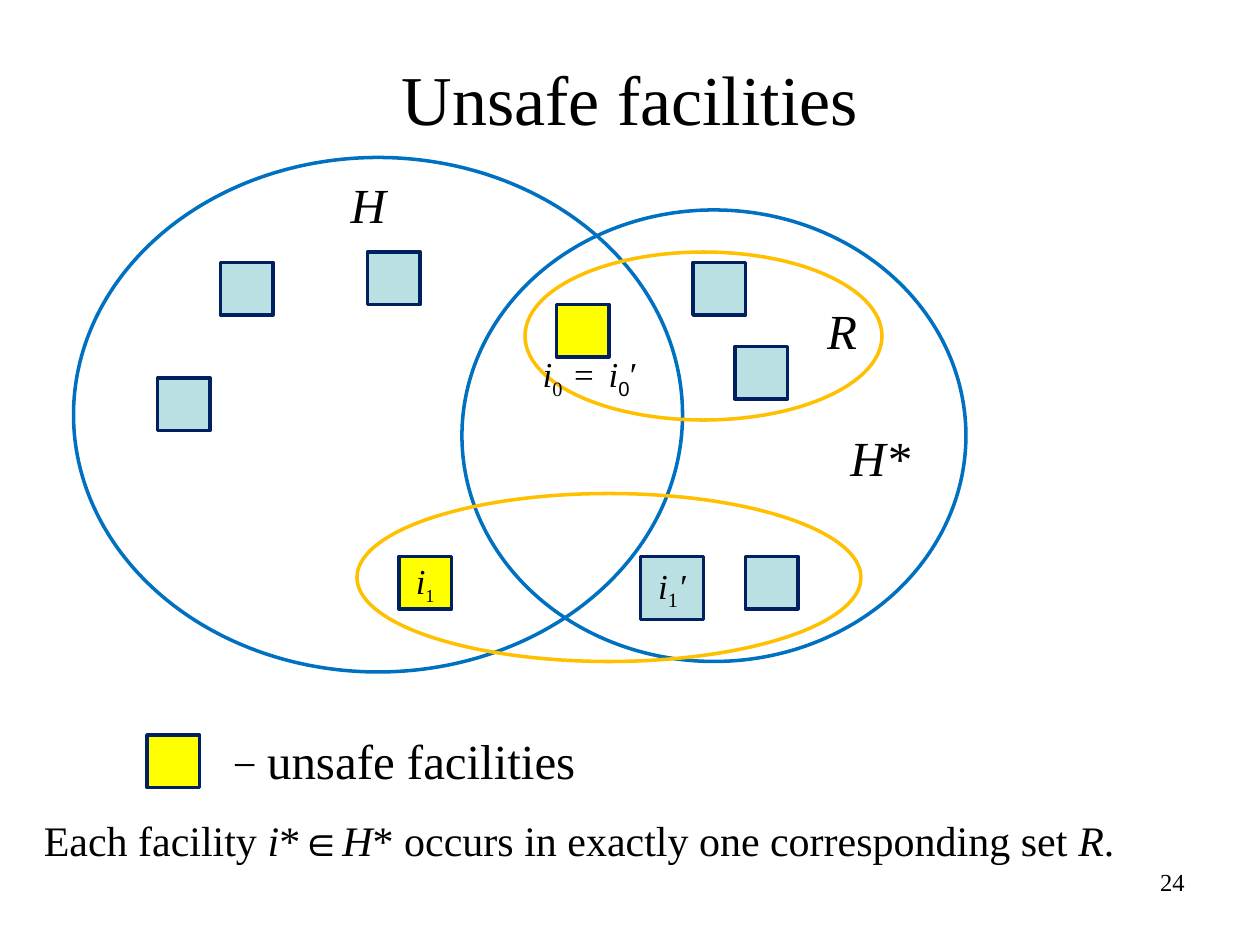
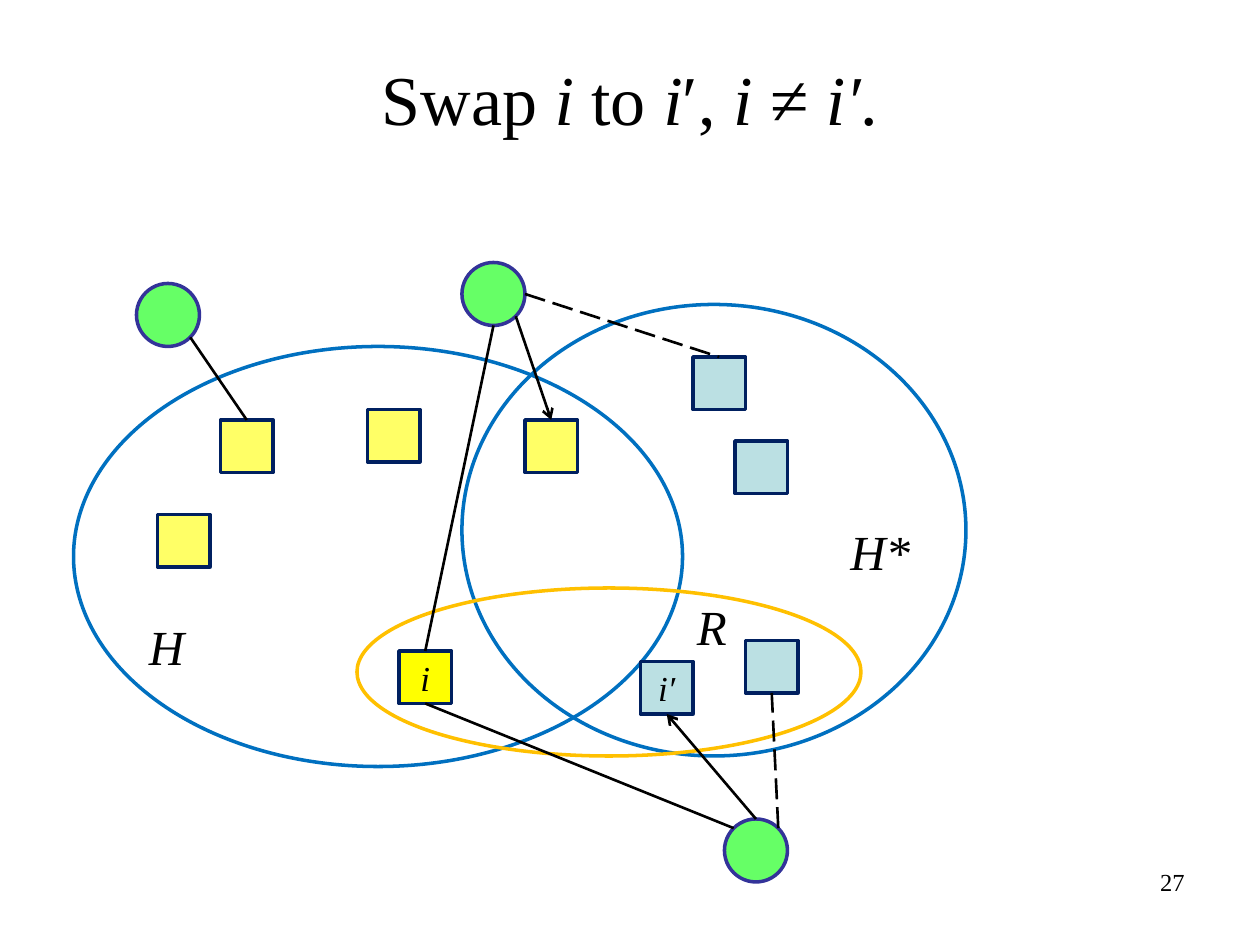
from math import cos, radians, sin

from lxml import etree
from pptx import Presentation
from pptx.dml.color import RGBColor
from pptx.enum.dml import MSO_LINE
from pptx.enum.shapes import MSO_CONNECTOR, MSO_SHAPE
from pptx.enum.text import MSO_ANCHOR, MSO_AUTO_SIZE, PP_ALIGN
from pptx.oxml.ns import qn
from pptx.util import Emu, Pt

SCALE = 7620
OVAL = MSO_SHAPE.OVAL
RECT = MSO_SHAPE.FLOWCHART_PROCESS
DISC = MSO_SHAPE.FLOWCHART_CONNECTOR
LINE = MSO_CONNECTOR.STRAIGHT
DASH = MSO_LINE.LONG_DASH
LEFT, MID, RIGHT = PP_ALIGN.LEFT, PP_ALIGN.CENTER, PP_ALIGN.RIGHT
CENTER = MSO_ANCHOR.MIDDLE
GROW = MSO_AUTO_SIZE.SHAPE_TO_FIT_TEXT
TOP, FOOT = 0, 2

FONT = "Times New Roman"
BLACK, BLUE, GOLD, NAVY = "000000", "0070C0", "FFC000", "002060"
PALE, YELLOW, LEMON = "BBE0E3", "FFFF00", "FFFF66"
GREEN, VIOLET = "66FF66", "333399"
SIDE, DIAM = 50, 60

STYLES = {
    "": {},
    "i": {"italic": True},
    "sub": {},
    "small": {"size": Pt(18)},
    "arial": {"name": "Arial"},
    "wide": {},
    "dash": {"size": Pt(24)},
}
MARKS = {
    "sub": {"baseline": "-25000"},
    "small": {"baseline": "-25000"},
    "arial": {"baseline": "-25000"},
    "wide": {"spc": "170"},
}


def px(*nums):
    return [Emu(round(num * SCALE)) for num in nums]


def tint(code):
    return RGBColor.from_string(code)


def apply(item, form):
    for key, value in form.items():
        setattr(item, key, value)


def write(frame, runs, size, align=LEFT, **form):
    apply(frame, form)
    para = frame.paragraphs[0]
    para.alignment = align
    for words, style in runs:
        run = para.add_run()
        run.text = words
        base = {"name": FONT, "size": Pt(size), "italic": False}
        apply(run.font, base | STYLES[style])
        run.font.color.rgb = tint(BLACK)
        for key, value in MARKS.get(style, {}).items():
            run.font._element.set(key, value)


def label(slide, spot, runs, size, **form):
    frame = slide.shapes.add_textbox(*px(*spot)).text_frame
    write(frame, runs, size, **{"word_wrap": False, "auto_size": GROW} | form)


def shape(slide, kind, spot, edge, fill=None):
    item = slide.shapes.add_shape(kind, *px(*spot))
    item.shadow.inherit = False
    if fill:
        item.fill.solid()
        item.fill.fore_color.rgb = tint(fill)
    else:
        item.fill.background()
    item.line.color.rgb = tint(edge)
    item.line.width = Pt(2)
    return item


def box(slide, left, top, fill, runs=(), side=SIDE):
    item = shape(slide, RECT, (left, top, side, side), NAVY, fill)
    if runs:
        write(item.text_frame, runs, 20, MID,
              word_wrap=False, vertical_anchor=CENTER)
    return item


def ball(slide, left, top):
    return shape(slide, DISC, (left, top, DIAM, DIAM), VIOLET, GREEN)


def join(slide, disc, angle, goal, side, dash=None, arrow=False):
    half = disc.width / 2
    turn = radians(angle)
    left = round(disc.left + half * (1 + cos(turn)))
    top = round(disc.top + half * (1 + sin(turn)))
    item = slide.shapes.add_connector(LINE, left, top, left, top)
    item.end_connect(goal, side)
    item.line.color.rgb = tint(BLACK)
    item.line.width = Pt(1.5)
    if dash:
        item.line.dash_style = dash
    if arrow:
        edge = item.line._get_or_add_ln()
        etree.SubElement(edge, qn("a:tailEnd"), type="arrow")
    etree.SubElement(item._element.spPr, qn("a:effectLst"))


def start(deck, title, page):
    slide = deck.slides.add_slide(deck.slide_layouts[5])
    head = slide.shapes.title
    head.left, head.top, head.width, head.height = px(60, 36, 1080, 114)
    write(head.text_frame, title, 40, MID, vertical_anchor=CENTER)
    label(slide, (860, 820, 280, 62), [(page, "")], 14, align=RIGHT,
          word_wrap=True, auto_size=MSO_AUTO_SIZE.NONE)
    return slide


def sets(slide, top, height, drop, name):
    shape(slide, OVAL, (70, top, 580, height), BLUE)
    shape(slide, OVAL, (440, 200 + drop, 480, 430), BLUE)
    shape(slide, OVAL, (340, 470 + drop, 480, 160), GOLD)
    label(slide, (798, 401 + drop, 82, 68), [("H*", "i")], 28)
    boxes = [box(slide, 660, 250 + drop, PALE),
             box(slide, 700, 330 + drop, PALE),
             box(slide, 380, 530 + drop, YELLOW, name)]
    return boxes[0], boxes[2]


def unsafe(deck):
    slide = start(deck, [("Unsafe facilities", "")], "24")
    sets(slide, 150, 490, 0, [("i", "i"), ("1", "small")])
    for left, top in ((210, 250), (350, 240), (150, 360), (710, 530)):
        box(slide, left, top, PALE)
    for left, top in ((530, 290), (140, 700)):
        box(slide, left, top, YELLOW)
    box(slide, 610, 530, PALE, [("i", "i"), ("1", "sub"), ("′", "i")], 60)
    shape(slide, OVAL, (500, 240, 340, 160), GOLD)
    label(slide, (322, 160, 59, 68), [("H", "i")], 28)
    label(slide, (776, 280, 53, 68), [("R", "i")], 28)
    label(slide, (505, 330, 118, 53),
          [("i", "i"), ("0", "sub"), (" = ", "wide"),
           ("i", "i"), ("0", "arial"), ("′", "")], 20)
    label(slide, (210, 690, 364, 68),
          [("− ", "dash"), ("unsafe facilities", "")], 28)
    label(slide, (30, 770, 1054, 60),
          [("Each facility ", ""), ("i", "i"), ("*∈", ""), ("H", "i"),
           ("* occurs in exactly one corresponding set ", ""),
           ("R", "i"), (".", "")], 24)


def swap(deck):
    title = [("Swap ", ""), ("i", "i"), (" to ", ""), ("i", "i"),
             ("′, ", ""), ("i ", "i"), ("≠ ", ""), ("i′", "i"), (".", "")]
    slide = start(deck, title, "27")
    far, old = sets(slide, 330, 400, 90, [("i", "i")])
    spots = ((210, 400), (350, 390), (150, 490), (500, 400))
    own = [box(slide, left, top, LEMON) for left, top in spots]
    new = box(slide, 610, 630, PALE, [("i′", "i")])
    last = box(slide, 710, 610, PALE)
    label(slide, (130, 581, 59, 68), [("H", "i")], 28)
    label(slide, (652, 562, 53, 68), [("R", "i")], 28)
    low = ball(slide, 690, 780)
    high = ball(slide, 440, 250)
    side = ball(slide, 130, 270)
    join(slide, low, 225, old, FOOT)
    join(slide, low, 315, last, FOOT, dash=DASH)
    join(slide, low, 270, new, FOOT, arrow=True)
    join(slide, high, 90, old, TOP)
    join(slide, high, 0, far, TOP, dash=DASH)
    join(slide, high, 45, own[3], TOP, arrow=True)
    join(slide, side, 45, own[0], TOP)


def main():
    deck = Presentation()
    deck.slide_width, deck.slide_height = px(1200, 900)
    unsafe(deck)
    swap(deck)
    deck.save("out.pptx")


if __name__ == "__main__":
    main()
